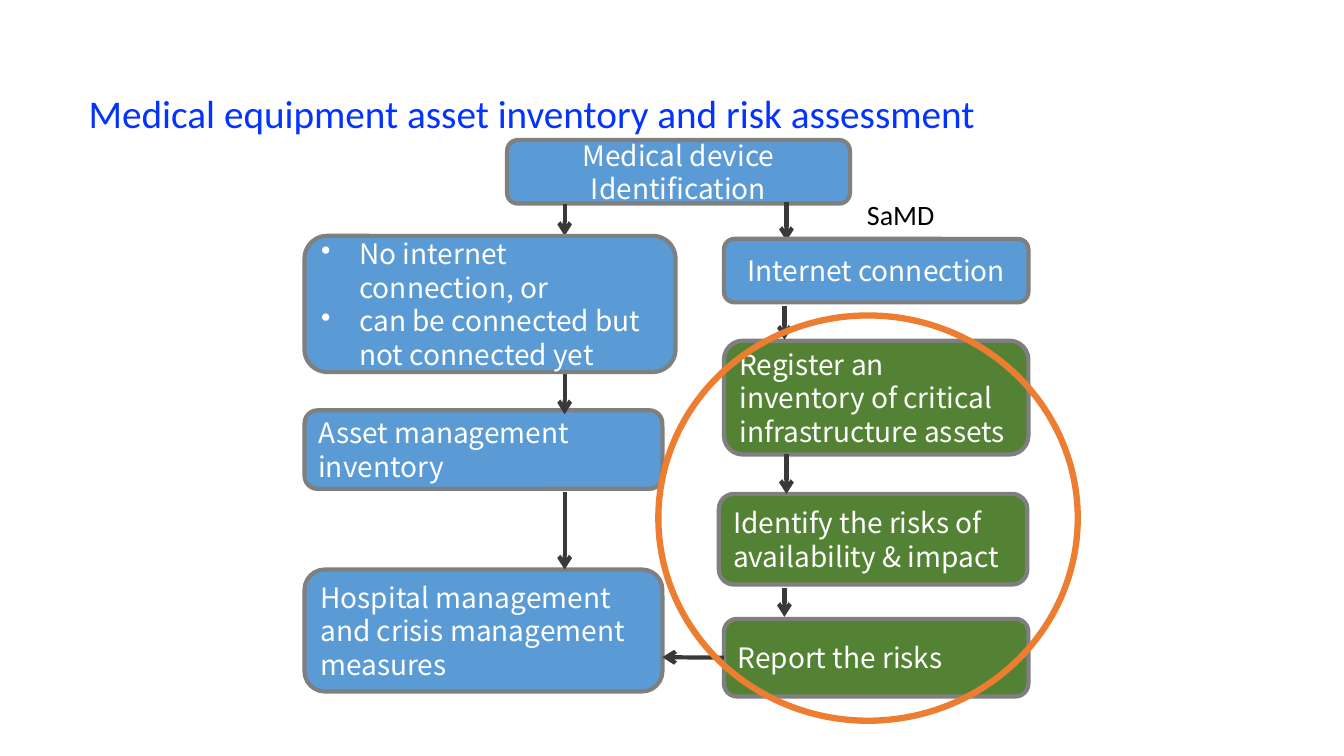
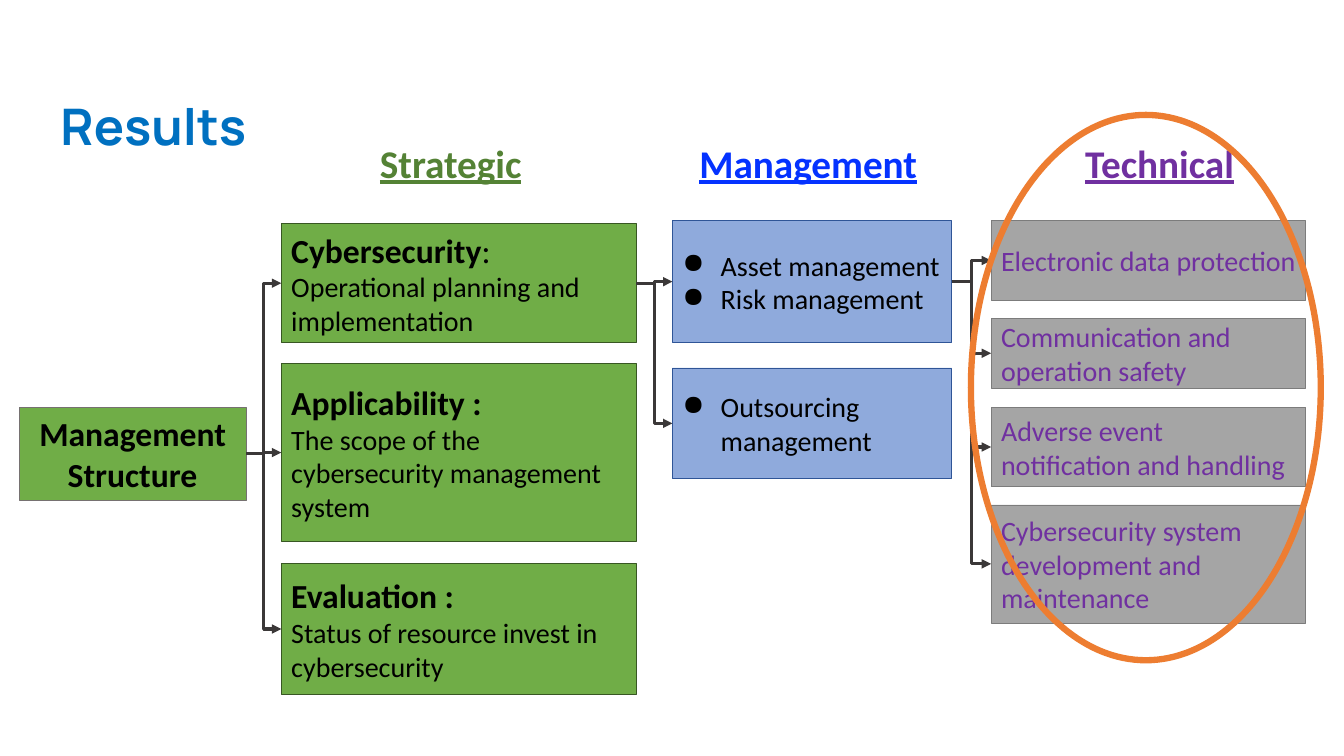
from lxml.etree import SubElement
from pptx import Presentation
from pptx.dml.color import RGBColor
from pptx.enum.shapes import MSO_CONNECTOR as CONNECTOR, MSO_SHAPE as SHAPE
from pptx.enum.text import MSO_ANCHOR as ANCHOR, MSO_AUTO_SIZE as AUTO_SIZE, PP_ALIGN as ALIGN
from pptx.oxml.ns import qn
from pptx.util import Inches, Pt

TITLE_ONLY = 5
BODY_FONT = "Calibri"
FLOW_FONT = "Noto Sans CJK SC"
FLOW_LEADING = Pt(24)
BLACK, WHITE = "000000", "FFFFFF"
ROYAL, PURPLE, ORANGE = "0432FF", "7030A0", "ED7D31"
FLOW_BLUE, DARK_GREEN, FLOW_BORDER = "5B9BD5", "548235", "7F7F7F"
GREEN, GREEN_BORDER, ROOT_BORDER = "70AD47", "385723", "767171"
PALE_BLUE, BLUE_BORDER = "8FAADC", "2F5597"
GRAY, GRAY_BORDER = "A5A5A5", "7C7C7C"
ARROW = "3B3838"


def rgb(value):
    return RGBColor.from_string(value)


def inches(*lengths):
    return [Inches(length) for length in lengths]


def style_run(run, size, color, font=BODY_FONT, bold=False, underline=False):
    run.font.size = Pt(size)
    run.font.name = font
    run.font.bold = bold
    run.font.underline = underline
    run.font.color.rgb = rgb(color)


def add_title(slide, text, at, size, color, font=BODY_FONT, bold=False, anchor=ANCHOR.TOP):
    title = slide.shapes.title
    title.left, title.top, title.width, title.height = inches(*at)
    frame = title.text_frame
    frame.text = text
    frame.auto_size = AUTO_SIZE.NONE
    frame.vertical_anchor = anchor
    paragraph = frame.paragraphs[0]
    paragraph.alignment = ALIGN.LEFT
    paragraph.line_spacing = 0.9
    style_run(paragraph.runs[0], size, color, font, bold)


def add_label(slide, text, at, size, color, align=ALIGN.LEFT, strong=False):
    frame = slide.shapes.add_textbox(*inches(*at)).text_frame
    frame.text = text
    frame.word_wrap = False
    frame.paragraphs[0].alignment = align
    style_run(frame.paragraphs[0].runs[0], size, color, bold=strong, underline=strong)


def add_bullet(paragraph, symbol):
    properties = paragraph._p.get_or_add_pPr()
    properties.set("marL", str(Inches(0.38)))
    properties.set("indent", str(-Inches(0.38)))
    SubElement(properties, qn("a:buChar"), char=symbol)


def add_box(slide, kind, at, fill, border, weight):
    box = slide.shapes.add_shape(kind, *inches(*at))
    box.shadow.inherit = False
    if fill:
        box.fill.solid()
        box.fill.fore_color.rgb = rgb(fill)
    else:
        box.fill.background()
    box.line.color.rgb = rgb(border)
    box.line.width = Pt(weight)
    return box


def write_lines(box, lines, color, font=BODY_FONT, bullet=None, align=ALIGN.LEFT, leading=None):
    frame = box.text_frame
    frame.word_wrap = True
    frame.vertical_anchor = ANCHOR.MIDDLE
    for number, pieces in enumerate(lines):
        paragraph = frame.add_paragraph() if number else frame.paragraphs[0]
        if bullet:
            add_bullet(paragraph, bullet)
        paragraph.alignment = align
        if leading:
            paragraph.line_spacing = leading
        for text, size, bold in pieces:
            run = paragraph.add_run()
            run.text = text
            style_run(run, size, color, font, bold)


def add_flow_box(slide, texts, at, fill=FLOW_BLUE, align=ALIGN.LEFT, bullet=None):
    box = add_box(slide, SHAPE.ROUNDED_RECTANGLE, at, fill, FLOW_BORDER, 3)
    lines = [[(text, 20, False)] for text in texts]
    write_lines(box, lines, WHITE, FLOW_FONT, bullet, align, FLOW_LEADING)
    return box


def add_panel(slide, lines, at, fill, border, color=BLACK, bullet=None, align=ALIGN.LEFT):
    panel = add_box(slide, SHAPE.RECTANGLE, at, fill, border, 0.5)
    write_lines(panel, lines, color, bullet=bullet, align=align)
    return panel


def add_highlight(slide, at):
    add_box(slide, SHAPE.OVAL, at, None, ORANGE, 4.5)


def add_arrow(slide, kind, ends, weight, head):
    arrow = slide.shapes.add_connector(kind, *inches(*ends))
    arrow.line.color.rgb = rgb(ARROW)
    arrow.line.width = Pt(weight)
    SubElement(arrow.line._get_or_add_ln(), qn("a:tailEnd"), type=head)
    SubElement(arrow._element.spPr, qn("a:effectLst"))
    return arrow


def add_branches(slide, source, targets):
    for target in targets:
        branch = add_arrow(slide, CONNECTOR.ELBOW, (0, 0, 1, 1), 2.25, "triangle")
        branch.begin_connect(source, 3)
        branch.end_connect(target, 1)


def build_risk_flow(slide):
    add_title(slide, "Medical equipment asset inventory and risk assessment",
              (0.78, 0.68, 11.5, 0.94), 28, ROYAL, anchor=ANCHOR.MIDDLE)

    add_flow_box(slide, ["Medical device Identification"], (5.03, 1.39, 3.4, 0.63),
                 align=ALIGN.CENTER)
    for text, top, height in (
        ("Asset management inventory", 4.07, 0.78),
        ("Hospital management and crisis management measures", 5.65, 1.21),
    ):
        add_flow_box(slide, [text], (3.02, top, 3.55, height))
    for text, at in (
        ("Register an inventory of critical infrastructure assets", (7.18, 3.38, 3.02, 1.13)),
        ("Identify the risks of availability & impact", (7.13, 4.9, 3.06, 0.9)),
    ):
        add_flow_box(slide, [text], at, DARK_GREEN)
    report = add_flow_box(slide, ["Report the risks"], (7.18, 6.14, 3.02, 0.77), DARK_GREEN)

    for x, top, bottom in (
        (5.6, 2.02, 2.34), (5.6, 3.64, 4.11), (5.6, 4.88, 5.65),
        (7.8, 2, 2.39), (7.78, 3.04, 3.37), (7.8, 4.5, 4.9), (7.78, 5.83, 6.12),
    ):
        add_arrow(slide, CONNECTOR.STRAIGHT, (x, top, x, bottom), 3, "arrow")
    to_hospital = add_arrow(slide, CONNECTOR.STRAIGHT, (7.18, 6.52, 6.57, 6.52), 3, "arrow")
    to_hospital.begin_connect(report, 1)

    add_flow_box(slide, ["Internet connection"], (7.18, 2.37, 3.02, 0.63), align=ALIGN.CENTER)
    add_flow_box(slide, ["No internet connection, or", "can be connected but not connected yet"],
                 (3.02, 2.34, 3.68, 1.35), bullet="•")
    add_highlight(slide, (6.53, 3.13, 4.16, 4.02))
    add_label(slide, "SaMD", (8.5, 1.91, 0.88, 0.44), 20, BLACK)


def build_results(slide):
    add_title(slide, "Results", (0.5, 0.96, 11.06, 1), 36, "0070C0", "Manrope", True)

    for text, left, width, color in (
        ("Strategic", 3.66, 1.62, DARK_GREEN),
        ("Management", 6.82, 2.39, ROYAL),
        ("Technical", 10.65, 1.7, PURPLE),
    ):
        add_label(slide, text, (left, 1.33, width, 0.57), 28, color, ALIGN.CENTER, True)

    structure = add_panel(slide, [[("Management Structure", 24, True)]],
                          (0.19, 4.04, 2.25, 0.92), GREEN, ROOT_BORDER, align=ALIGN.CENTER)
    strategic = [
        add_panel(slide, [heading, [(detail, 20, False)]], (2.79, top, 3.52, height),
                  GREEN, GREEN_BORDER)
        for heading, detail, top, height in (
            ([("Cybersecurity", 24, True), (":", 24, False)],
             "Operational planning and implementation", 2.22, 1.18),
            ([("Applicability :", 24, True)],
             "The scope of the cybersecurity management system", 3.61, 1.76),
            ([("Evaluation :", 24, True)],
             "Status of resource invest in cybersecurity", 5.59, 1.3),
        )
    ]
    management = [
        add_panel(slide, [[(text, 20, False)] for text in texts], (6.67, top, 2.77, height),
                  PALE_BLUE, BLUE_BORDER, bullet="●")
        for texts, top, height in (
            (("Asset management", "Risk management"), 2.19, 1.21),
            (("Outsourcing management",), 3.65, 1.1),
        )
    ]
    technical = [
        add_panel(slide, [[(text, 20, False)]], (9.83, top, 3.12, height),
                  GRAY, GRAY_BORDER, PURPLE)
        for text, top, height in (
            ("Electronic data protection", 2.19, 0.79),
            ("Communication and operation safety", 3.16, 0.69),
            ("Adverse event notification and handling", 4.04, 0.79),
            ("Cybersecurity system development and maintenance", 5.01, 1.17),
        )
    ]

    add_branches(slide, structure, strategic)
    add_branches(slide, strategic[0], management)
    add_branches(slide, management[0], technical)
    add_highlight(slide, (9.63, 1.14, 3.47, 5.41))


def main():
    deck = Presentation()
    deck.slide_width, deck.slide_height = inches(13.33, 7.5)
    for build in (build_risk_flow, build_results):
        build(deck.slides.add_slide(deck.slide_layouts[TITLE_ONLY]))
    deck.save("out.pptx")


if __name__ == "__main__":
    main()
